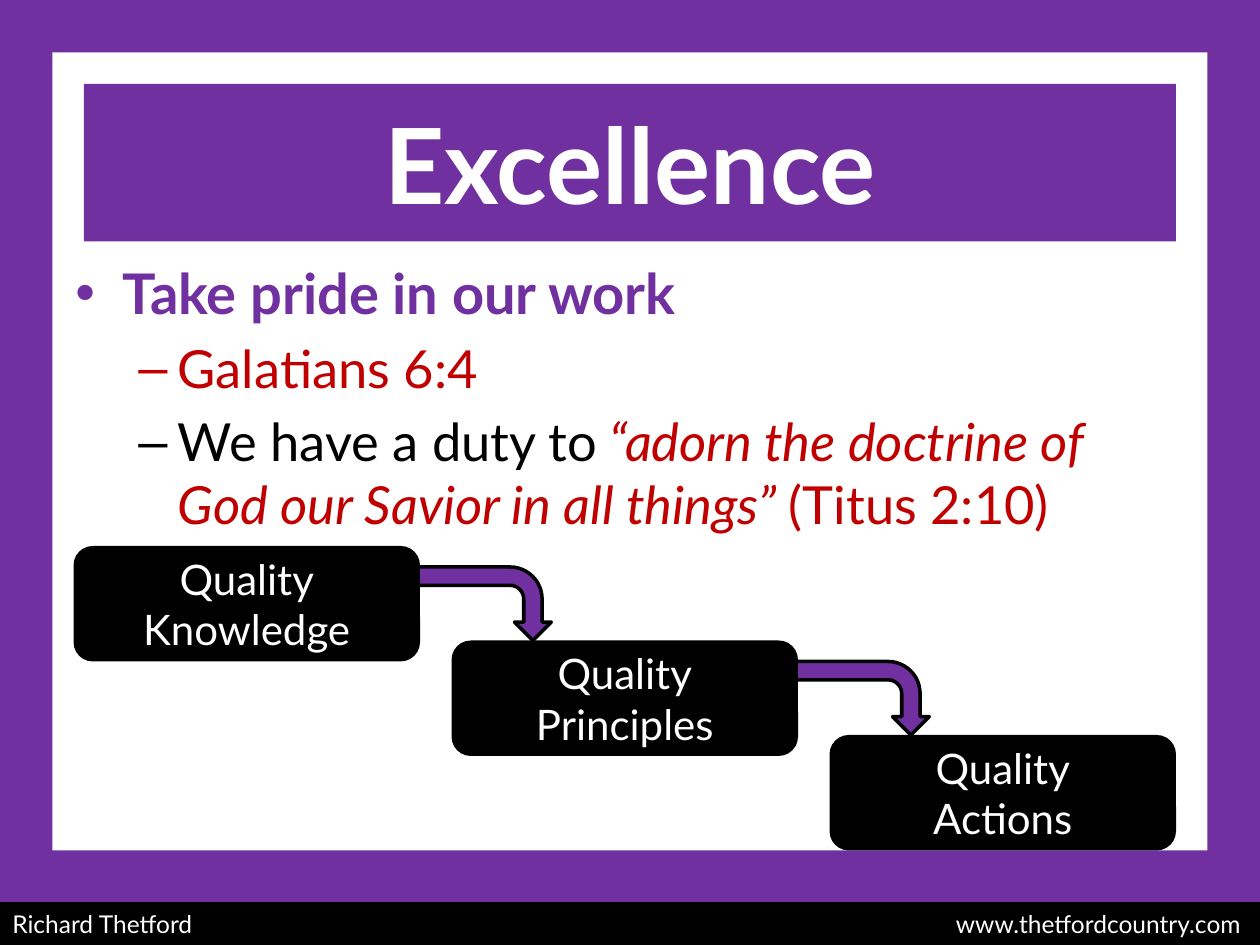
from lxml.etree import SubElement
from pptx import Presentation
from pptx.dml.color import RGBColor
from pptx.enum.shapes import MSO_SHAPE
from pptx.enum.text import MSO_ANCHOR, PP_ALIGN
from pptx.oxml.ns import qn
from pptx.util import Pt

THEME = {
    "font": "Lato",
    "purple": "7030A0", "red": "C00000", "black": "000000", "white": "FFFFFF",
    "title": 60, "point": 32, "detail": 30, "step": 24, "foot": 14,
}
WIDTH, HEIGHT, EDGE = 720, 540, 30

TITLE = "Excellence"
# Each point: level, then runs of (text, colour, italic)
POINTS = [
    (0, [("Take pride in our work", "purple", False)]),
    (1, [("Galatians 6:4", "red", False)]),
    (1, [("We have a duty to", "black", False),
         (" “adorn the doctrine of God our Savior in all things” ", "red", True),
         ("(Titus 2:10)", "red", False)]),
]
# Level: bullet, left indent, hanging indent, type size, bold
LEVELS = [("•", 27, 27, "point", True), ("–", 58.5, 22.5, "detail", False)]
STEPS = [("Quality", "Knowledge"), ("Quality", "Principles"), ("Quality", "Actions")]
FOOT = "Richard Thetford\twww.thetfordcountry.com"

BORDER = [(0, 0, EDGE, HEIGHT), (WIDTH - EDGE, 0, EDGE, HEIGHT),
          (0, 0, WIDTH, EDGE), (0, 486, WIDTH, EDGE)]
BOX_W, BOX_H = 198, 66
START, SHIFT = (42, 312), (216, 54)
ARROW_W, ARROW_H = 42, 81


def color(name):
    return RGBColor.from_string(THEME[name])


def add_text(para, text, size="step", tint="white", bold=False, italic=False):
    run = para.add_run()
    run.text = text
    font = run.font
    font.name, font.size = THEME["font"], Pt(THEME[size])
    font.bold, font.italic = bold, italic
    font.color.rgb = color(tint)


def add_block(slide, kind, place, fill, line=None):
    shape = slide.shapes.add_shape(kind, *map(Pt, place))
    shape.shadow.inherit = False
    shape.fill.solid()
    shape.fill.fore_color.rgb = color(fill)
    if line:
        shape.line.color.rgb = color(line)
        shape.line.width = Pt(2)
    else:
        shape.line.fill.background()
    return shape


def first_line(shape, align=PP_ALIGN.CENTER):
    """Centre the shape's text vertically and return its first paragraph."""
    frame = shape.text_frame
    frame.word_wrap = True
    frame.vertical_anchor = MSO_ANCHOR.MIDDLE
    para = frame.paragraphs[0]
    para.alignment = align
    return para


def add_points(slide):
    frame = slide.shapes.add_textbox(Pt(36), Pt(144), Pt(648), Pt(174)).text_frame
    frame.word_wrap = True
    for i, (level, runs) in enumerate(POINTS):
        mark, left, hang, size, bold = LEVELS[level]
        para = frame.paragraphs[0] if i == 0 else frame.add_paragraph()
        para.level = level
        para.space_before = Pt(THEME[size] * 0.2)
        props = para._p.get_or_add_pPr()
        props.set("marL", str(Pt(left)))
        props.set("indent", str(-Pt(hang)))
        SubElement(props, qn("a:buFont"), typeface="Arial")
        SubElement(props, qn("a:buChar"), char=mark)
        for text, tint, italic in runs:
            add_text(para, text, size=size, tint=tint, bold=bold, italic=italic)


def add_steps(slide):
    spots = [(START[0] + i * SHIFT[0], START[1] + i * SHIFT[1])
             for i in range(len(STEPS))]
    # Each arrow turns about its centre, level with the middle of its box.
    for x, y in spots[:-1]:
        place = (x + 211.5, y + (BOX_H - ARROW_H) / 2, ARROW_W, ARROW_H)
        arrow = add_block(slide, MSO_SHAPE.BENT_ARROW, place, "purple", line="black")
        arrow.rotation = 90
    for (x, y), (top, low) in zip(spots, STEPS):
        box = add_block(slide, MSO_SHAPE.ROUNDED_RECTANGLE,
                        (x, y, BOX_W, BOX_H), "black")
        para = first_line(box)
        add_text(para, top)
        para.add_line_break()
        add_text(para, low)


def add_foot(slide):
    bar = add_block(slide, MSO_SHAPE.RECTANGLE, (0, 515.5, WIDTH, 24.5), "black")
    para = first_line(bar, align=PP_ALIGN.LEFT)
    tabs = SubElement(para._p.get_or_add_pPr(), qn("a:tabLst"))
    SubElement(tabs, qn("a:tab"), pos=str(Pt(702)), algn="r")
    add_text(para, FOOT, size="foot")


def main():
    deck = Presentation()
    deck.slide_width, deck.slide_height = Pt(WIDTH), Pt(HEIGHT)
    slide = deck.slides.add_slide(deck.slide_layouts[6])
    head = add_block(slide, MSO_SHAPE.RECTANGLE, (48, 48, 624, 90), "purple")
    add_text(first_line(head), TITLE, size="title", bold=True)
    add_points(slide)
    for place in BORDER:
        add_block(slide, MSO_SHAPE.RECTANGLE, place, "purple")
    add_steps(slide)
    add_foot(slide)
    deck.save("out.pptx")


if __name__ == "__main__":
    main()
